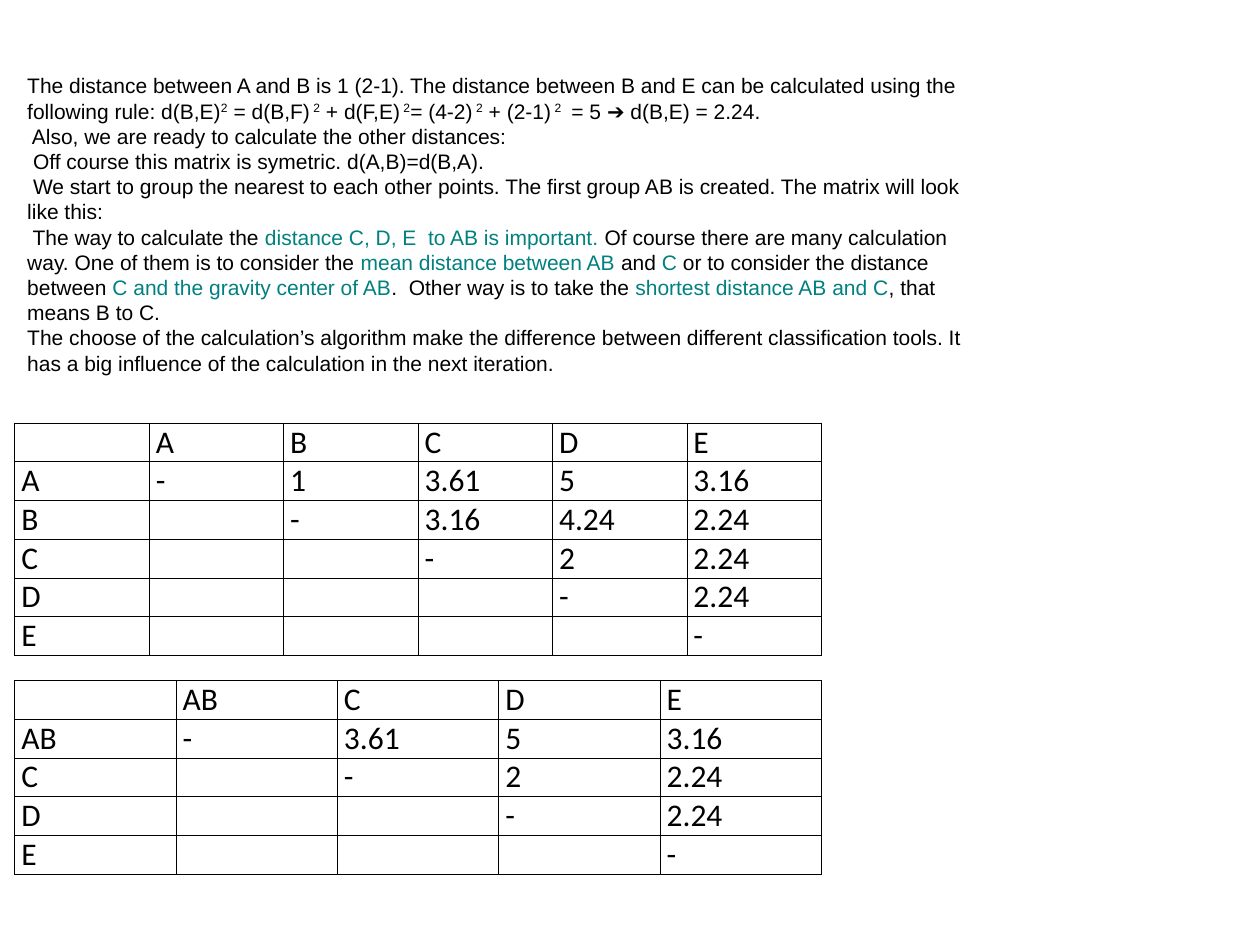
from lxml import etree
from pptx import Presentation
from pptx.dml.color import RGBColor
from pptx.enum.text import MSO_ANCHOR
from pptx.oxml.ns import qn
from pptx.util import Cm, Pt

MIDDLE = MSO_ANCHOR.MIDDLE
BLACK, TEAL = "000000", "008080"
PLAIN, SUP, KEY = "plain", "sup", "key"

NOTES = [
    [("The distance between A and B is 1 (2-1). The distance between B and E "
      "can be calculated using the following rule: d(B,E)", PLAIN),
     ("2", SUP), (" = d(B,F)", PLAIN), (" 2", SUP), (" + d(F,E)", PLAIN),
     (" 2", SUP), ("= (4-2)", PLAIN), (" 2", SUP), (" + (2-1)", PLAIN),
     (" 2   ", SUP), ("= 5 ➔ d(B,E) = 2.24.", PLAIN)],
    [(" Also, we are ready to calculate the other distances:", PLAIN)],
    [(" Off course this matrix is symetric. d(A,B)=d(B,A).", PLAIN)],
    [(" We start to group the nearest to each other points. The first group "
      "AB is created. The matrix will look like this:", PLAIN)],
    [(" The way to calculate the ", PLAIN),
     ("distance C, D, E  to AB is important. ", KEY),
     ("Of course there are many calculation way. One of them is to consider "
      "the ", PLAIN),
     ("mean distance between AB ", KEY), ("and ", PLAIN), ("C ", KEY),
     ("or to consider the distance between ", PLAIN),
     ("C and the gravity center of AB", KEY),
     (".  Other way is to take the ", PLAIN),
     ("shortest distance AB and C", KEY), (", that means B to C.", PLAIN)],
    [("The choose of the calculation’s algorithm make the difference between "
      "different classification tools. It has a big influence of the "
      "calculation in the next iteration.", PLAIN)],
]

GRIDS = [
    (8.53, ["A", "B", "C", "D", "E"],
     [["1", "3.61", "5", "3.16"], ["3.16", "4.24", "2.24"],
      ["2", "2.24"], ["2.24"], []]),
    (13.72, ["AB", "C", "D", "E"],
     [["3.61", "5", "3.16"], ["2", "2.24"], ["2.24"], []]),
]
LEFT, WIDTH, ROW = 0.3, 16.26, 0.78
CELL = dict(margin_left=Cm(0.13), margin_right=Cm(0.13),
            margin_top=0, margin_bottom=0)


def color(code):
    return RGBColor.from_string(code)


def add_run(par, text, size, face, code=BLACK):
    run = par.add_run()
    run.text = text
    for name, value in dict(size=Pt(size), name=face).items():
        setattr(run.font, name, value)
    run.font.color.rgb = color(code)
    return run


def add_edges(cell):
    props = cell._tc.get_or_add_tcPr()
    for spot, side in enumerate(("lnL", "lnR", "lnT", "lnB")):
        line = etree.Element(qn("a:" + side), w=str(Pt(0.5)))
        fill = etree.SubElement(line, qn("a:solidFill"))
        etree.SubElement(fill, qn("a:srgbClr"), val=BLACK)
        props.insert(spot, line)


def add_grid(slide, top, names, upper):
    count = len(names) + 1
    rows = [[""] + names]
    for i, (name, values) in enumerate(zip(names, upper)):
        rows.append([name] + [""] * i + ["-"] + values)
    table = slide.shapes.add_table(count, count, Cm(LEFT), Cm(top),
                                   Cm(WIDTH), Cm(ROW * count)).table
    table.first_row = table.horz_banding = False
    for col in table.columns:
        col.width = Cm(WIDTH / count)
    for r, row in enumerate(rows):
        for c, text in enumerate(row):
            cell = table.cell(r, c)
            for name, value in CELL.items():
                setattr(cell, name, value)
            cell.fill.background()
            add_edges(cell)
            if text:
                add_run(cell.text_frame.paragraphs[0], text, 18, "Calibri")


def add_notes(slide):
    box = slide.shapes.add_textbox(Cm(LEFT), Cm(1.32), Cm(19.4), Cm(6.4))
    frame = box.text_frame
    frame.word_wrap = True
    frame.vertical_anchor = MIDDLE
    for i, parts in enumerate(NOTES):
        par = frame.add_paragraph() if i else frame.paragraphs[0]
        par.line_spacing = Pt(14.4)
        for text, kind in parts:
            run = add_run(par, text, 12, "Arial", TEAL if kind == KEY else BLACK)
            if kind == SUP:
                run.font._element.set("baseline", "30000")


def main():
    deck = Presentation()
    deck.slide_width, deck.slide_height = Cm(25.4), Cm(19.05)
    slide = deck.slides.add_slide(deck.slide_layouts[6])
    for grid in GRIDS:
        add_grid(slide, *grid)
    add_notes(slide)
    deck.save("out.pptx")


if __name__ == "__main__":
    main()
